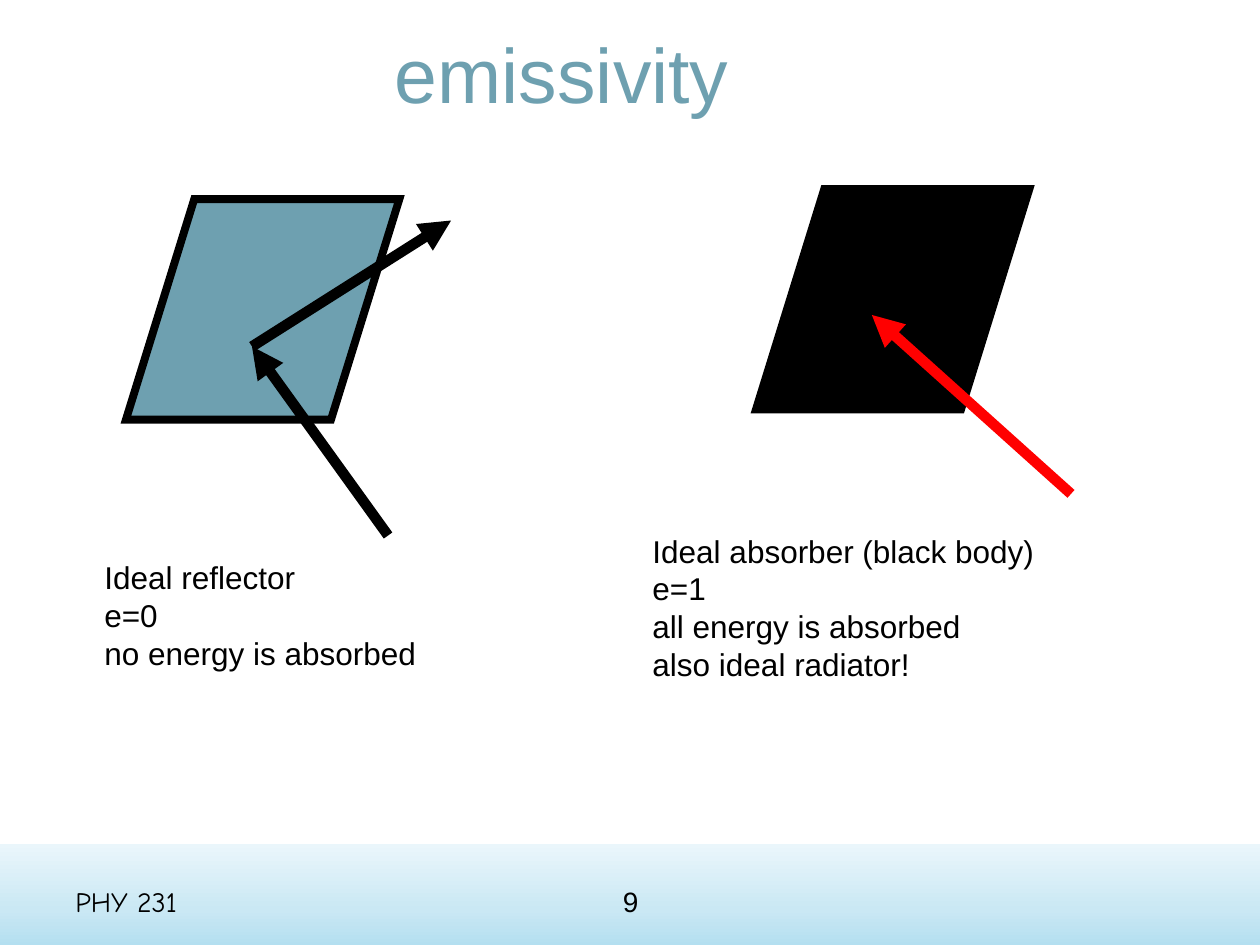
from copy import deepcopy
from dataclasses import dataclass

from lxml.etree import SubElement
from pptx import Presentation
from pptx.dml.color import RGBColor as Color
from pptx.enum.shapes import MSO_CONNECTOR as Link, MSO_SHAPE as Kind
from pptx.enum.text import MSO_ANCHOR as Anchor, PP_ALIGN as Align
from pptx.oxml.ns import qn
from pptx.util import Pt

PX = 9144  # EMU in one px, 100 px to the inch


@dataclass(frozen=True)
class Theme:
    font: str = "Arial"
    hand: str = "Comic Neue"
    black: str = "000000"
    red: str = "FF0000"
    teal: str = "6EA0B0"
    band: tuple = ((0, "B4DFF0"), (0.35, "CAE8F4"), (1, "EAF6FB"))
    title: int = 44
    body: int = 18
    foot: int = 16
    edge: float = 4.5
    ray: int = 6


THEME = Theme()


def emu(*vals):
    return [v * PX for v in vals]


def rgb(code):
    return Color.from_string(code)


def style(par, size, color=THEME.black, font=THEME.font, align=Align.LEFT):
    par.alignment = align
    par.font.name = font
    par.font.size = Pt(size)
    par.font.color.rgb = rgb(color)


def add_text(slide, box, lines, size, anchor=Anchor.TOP, **look):
    frame = slide.shapes.add_textbox(*emu(*box)).text_frame
    frame.word_wrap = True
    frame.vertical_anchor = anchor
    frame.text = "\n".join(lines)
    for par in frame.paragraphs:
        style(par, size, **look)


def add_title(slide, box, text):
    title = slide.shapes.title
    title.left, title.top, title.width, title.height = emu(*box)
    frame = title.text_frame
    frame.text = text
    frame.vertical_anchor = Anchor.MIDDLE
    style(frame.paragraphs[0], THEME.title, THEME.teal, align=Align.CENTER)


def add_footer(slide, box, course, page):
    x, y, w, h = box
    band = slide.shapes.add_shape(Kind.RECTANGLE, *emu(*box))
    band.shadow.inherit = False
    band.line.fill.background()
    fill = band.fill
    fill.gradient()
    fill.gradient_angle = 90
    stops = fill.gradient_stops
    last = stops[1]._gs
    last.addnext(deepcopy(last))
    for stop, (pos, color) in zip(fill.gradient_stops, THEME.band):
        stop.position = pos
        stop.color.rgb = rgb(color)
    add_text(slide, (x + 50, y + 25, 233, 40), [course], THEME.foot,
             Anchor.MIDDLE, font=THEME.hand)
    add_text(slide, (x + 342, y + 25, 317, 40), [page], THEME.foot,
             Anchor.MIDDLE, align=Align.CENTER)


def add_plate(slide, box, color):
    plate = slide.shapes.add_shape(Kind.PARALLELOGRAM, *emu(*box))
    plate.adjustments[0] = 0.31
    plate.shadow.inherit = False
    plate.fill.solid()
    plate.fill.fore_color.rgb = rgb(color)
    plate.line.color.rgb = rgb(THEME.black)
    plate.line.width = Pt(THEME.edge)
    SubElement(plate.line._get_or_add_ln(), qn("a:miter"), lim="800000")


def add_ray(slide, start, end, color):
    ray = slide.shapes.add_connector(Link.STRAIGHT, *emu(*start, *end))
    ray.line.color.rgb = rgb(color)
    ray.line.width = Pt(THEME.ray)
    SubElement(ray.line._get_or_add_ln(), qn("a:tailEnd"), type="triangle")
    SubElement(ray._element.spPr, qn("a:effectLst"))


def add_case(slide, box, inset, fill, ray, route, drop, lines):
    """Plate inset in the box, rays along a route from its corner, note below."""
    x, y, w, h = box
    left = x + inset
    add_plate(slide, (left, y, 217, 175), fill)
    stops = [(left + dx, y + dy) for dx, dy in route]
    for start, end in zip(stops, stops[1:]):
        add_ray(slide, start, end, ray)
    add_text(slide, (x, y + drop, w, h - drop), lines, THEME.body)


def main():
    deck = Presentation()
    deck.slide_width, deck.slide_height = emu(1000, 750)
    slide = deck.slides.add_slide(deck.slide_layouts[5])
    add_footer(slide, (0, 670, 1000, 80), "PHY 231", "9")
    add_title(slide, (23, 13, 846, 89), "emissivity")
    add_case(slide, (73, 158, 360, 450), 27, THEME.teal, THEME.black,
             [(208, 267), (100, 117), (258, 17)], 280,
             ["Ideal reflector", "e=0", "no energy is absorbed"])
    add_case(slide, (508, 150, 452, 437), 92, THEME.black, THEME.red,
             [(250, 242), (92, 100)], 267,
             ["Ideal absorber (black body)", "e=1",
              "all energy is absorbed", "also ideal radiator!"])
    deck.save("out.pptx")


if __name__ == "__main__":
    main()
